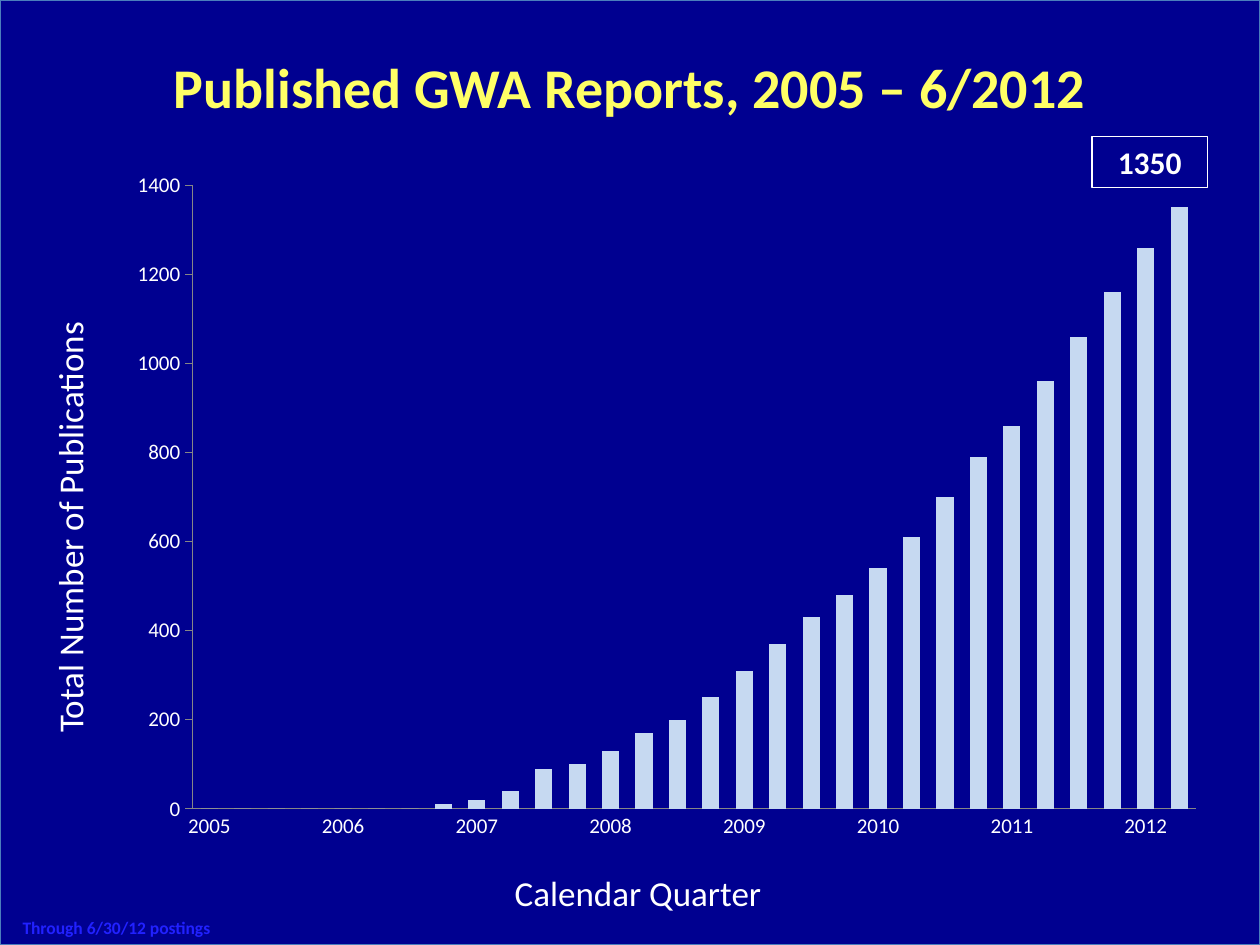
from dataclasses import dataclass

from lxml import etree
from pptx import Presentation
from pptx.chart import data as cd
from pptx.dml.color import RGBColor
from pptx.enum import chart as ch, shapes, text
from pptx.oxml import ns
from pptx.util import Pt


@dataclass(frozen=True)
class Theme:
    """Colours and type sizes of the deck."""
    font: str = "Calibri"
    back: str = "000090"
    edge: str = "4B7EBC"
    title: str = "FFFF66"
    ink: str = "FFFFFF"
    note: str = "2121FF"
    bar: str = "C6D9F1"
    axis: str = "868686"
    title_size: int = 32
    label_size: int = 20
    total_size: int = 18
    tick_size: int = 12
    note_size: int = 10


THEME = Theme()
FIRST_YEAR = 2005
TOTALS = [0, 0, 0, 0, 0, 0, 0, 10, 20, 40, 90, 100, 130, 170, 200,
          250, 310, 370, 430, 480, 540, 610, 700, 790, 860, 960,
          1060, 1160, 1260, 1350]


def rgb(value):
    """Turn a hex string into a colour."""
    return RGBColor.from_string(value)


def style_font(font, size, color, bold=False):
    """Apply the theme face with a size, colour and weight."""
    font.name = THEME.font
    font.size = Pt(size)
    font.bold = bold
    font.color.rgb = rgb(color)


def place(sp, box):
    """Move a shape into a box given in points."""
    sp.left, sp.top, sp.width, sp.height = map(Pt, box)


def write(sp, content, size, color, bold=False, align=text.PP_ALIGN.LEFT):
    """Set one formatted paragraph in a shape."""
    tf = sp.text_frame
    tf.text = content
    p = tf.paragraphs[0]
    p.alignment = align
    style_font(p.runs[0].font, size, color, bold)
    return p


def add_backdrop(s, box):
    """Lay the coloured panel behind the title."""
    sp = s.shapes.add_shape(shapes.MSO_SHAPE.RECTANGLE, *map(Pt, box))
    sp.shadow.inherit = False
    sp.fill.solid()
    sp.fill.fore_color.rgb = rgb(THEME.back)
    sp.line.color.rgb = rgb(THEME.edge)
    sp.line.width = Pt(0.75)
    s.shapes.title.element.addprevious(sp.element)


def add_title(s, box, content):
    """Fill the title placeholder."""
    sp = s.shapes.title
    place(sp, box)
    p = write(sp, content, THEME.title_size, THEME.title, True, text.PP_ALIGN.CENTER)
    p.line_spacing = 0.95
    sp.text_frame.vertical_anchor = text.MSO_ANCHOR.MIDDLE
    sp.text_frame.auto_size = text.MSO_AUTO_SIZE.NONE


def add_label(s, box, content, size, color, bold=False,
              align=text.PP_ALIGN.LEFT, wrap=False, rotation=0):
    """Add a text box, turned if asked."""
    sp = s.shapes.add_textbox(*map(Pt, box))
    sp.rotation = rotation
    write(sp, content, size, color, bold, align)
    sp.text_frame.word_wrap = wrap
    sp.text_frame.auto_size = text.MSO_AUTO_SIZE.SHAPE_TO_FIT_TEXT
    return sp


def add_total(s, box, content):
    """Add the outlined box with the latest total."""
    sp = add_label(s, box, content, THEME.total_size, THEME.ink, True,
                   text.PP_ALIGN.CENTER, True)
    sp.line.color.rgb = rgb(THEME.ink)
    sp.line.width = Pt(0.75)


def fix_plot_area(chart, x, y, w, h):
    """Pin the inner plot area as fractions of the chart."""
    area = chart.plots[0]._element.getparent()
    for old in area.findall(ns.qn("c:layout")):
        area.remove(old)
    layout = etree.Element(ns.qn("c:layout"))
    manual = etree.SubElement(layout, ns.qn("c:manualLayout"))
    settings = {"layoutTarget": "inner", "xMode": "edge", "yMode": "edge",
                "x": x, "y": y, "w": w, "h": h}
    for tag, value in settings.items():
        etree.SubElement(manual, ns.qn(f"c:{tag}"), val=str(value))
    area.insert(0, layout)


def add_totals_chart(s, box):
    """Add the quarterly column chart with yearly labels."""
    data = cd.CategoryChartData()
    data.categories = [str(FIRST_YEAR + i // 4) if i % 4 == 0 else ""
                       for i in range(len(TOTALS))]
    data.add_series("Series 1", TOTALS)
    chart = s.shapes.add_chart(ch.XL_CHART_TYPE.COLUMN_CLUSTERED,
                               *map(Pt, box), data).chart
    chart.has_legend = chart.has_title = False
    style_font(chart.font, THEME.tick_size, THEME.ink)
    fix_plot_area(chart, 0.07, 0.04, 0.91, 0.9)

    plot = chart.plots[0]
    plot.gap_width = 95
    plot.vary_by_categories = False
    fill = plot.series[0].format.fill
    fill.solid()
    fill.fore_color.rgb = rgb(THEME.bar)

    for axis, tick in ((chart.category_axis, ch.XL_TICK_MARK.NONE),
                       (chart.value_axis, ch.XL_TICK_MARK.OUTSIDE)):
        axis.has_major_gridlines = False
        axis.major_tick_mark = tick
        axis.minor_tick_mark = ch.XL_TICK_MARK.NONE
        axis.format.line.color.rgb = rgb(THEME.axis)
        axis.format.line.width = Pt(0.75)
    chart.value_axis.minimum_scale = 0
    chart.value_axis.maximum_scale = 1400
    chart.value_axis.major_unit = 200


def build_reports_slide(prs, box):
    """Compose the slide of published reports."""
    s = prs.slides.add_slide(prs.slide_layouts[5])
    add_backdrop(s, box)
    add_title(s, (24, 30, 672, 42), "Published GWA Reports, 2005 – 6/2012")
    add_label(s, (-107.3, 263.5, 293.8, 31), "Total Number of Publications",
              THEME.label_size, THEME.ink, wrap=True, rotation=270)
    add_label(s, (280, 494.6, 169.2, 31), "Calendar Quarter",
              THEME.label_size, THEME.ink, align=text.PP_ALIGN.CENTER)
    add_label(s, (5.8, 520.6, 129.6, 19.4), "Through 6/30/12 postings",
              THEME.note_size, THEME.note, True)
    add_totals_chart(s, (66, 90, 630, 396))
    add_total(s, (624, 78, 66, 29), str(TOTALS[-1]))


def main():
    """Build and save the deck."""
    prs = Presentation()
    prs.slide_width, prs.slide_height = Pt(720), Pt(540)
    build_reports_slide(prs, (0, 0, 720, 540))
    prs.save("out.pptx")


if __name__ == "__main__":
    main()
